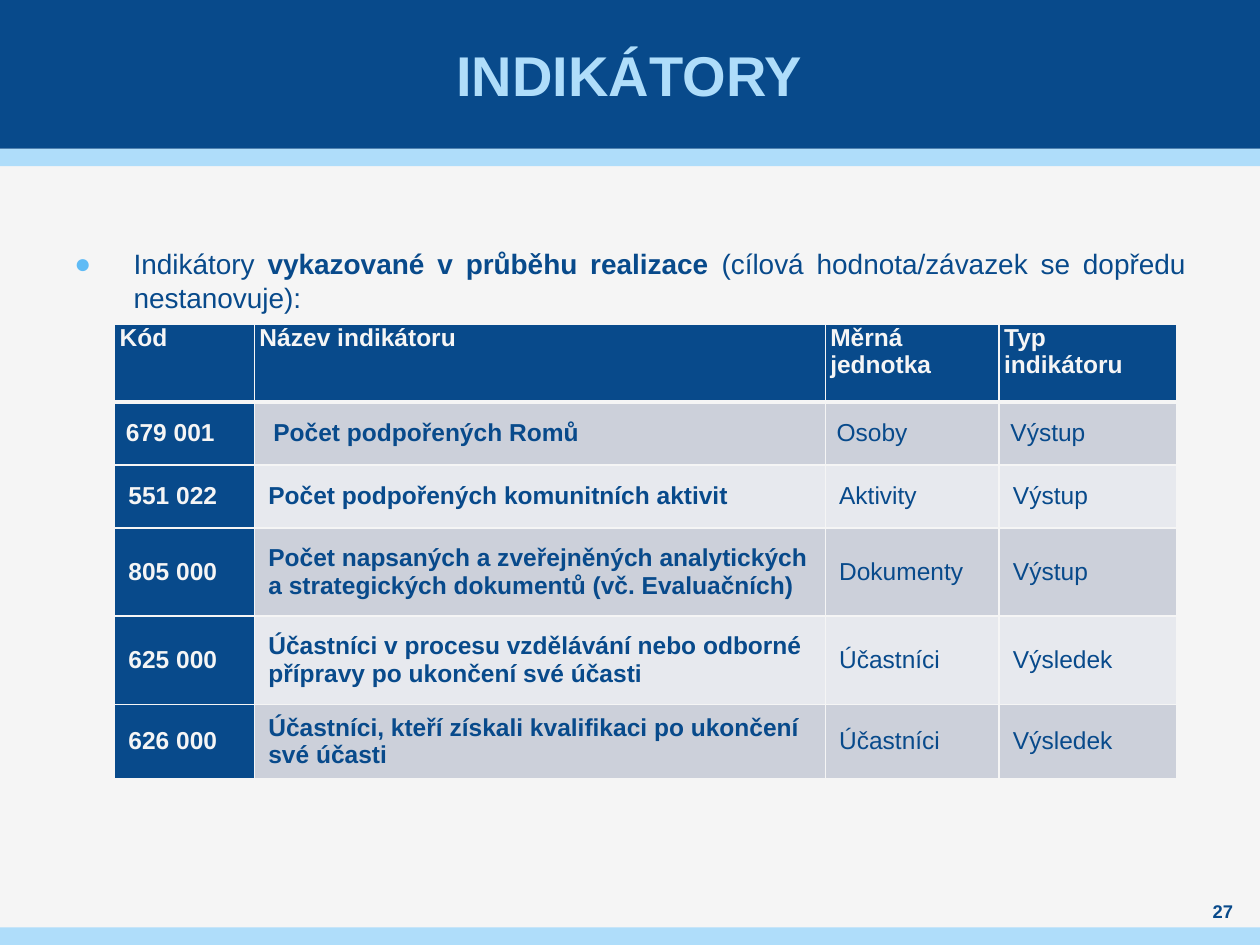
from lxml import etree
from pptx import Presentation
from pptx.dml.color import RGBColor
from pptx.enum.shapes import MSO_SHAPE
from pptx.enum.text import MSO_ANCHOR, PP_ALIGN
from pptx.oxml.ns import qn
from pptx.util import Inches, Pt

CENTER, JUSTIFY, LEFT = PP_ALIGN.CENTER, PP_ALIGN.JUSTIFY, PP_ALIGN.LEFT
TOP, MIDDLE = MSO_ANCHOR.TOP, MSO_ANCHOR.MIDDLE
RECTANGLE = MSO_SHAPE.RECTANGLE

NAVY = RGBColor(0x08, 0x4A, 0x8B)
SKY = RGBColor(0xAF, 0xDD, 0xFA)
BULLET_BLUE = RGBColor(0x5F, 0xBB, 0xF5)
PAPER = RGBColor(0xF5, 0xF5, 0xF5)
ROW_FILLS = [RGBColor(0xCC, 0xD0, 0xDA), RGBColor(0xE7, 0xE9, 0xEE)]

TITLE = "INDIKÁTORY"
PAGE_NUMBER = "27"
INTRO = [
    ("Indikátory ", False),
    ("vykazované v průběhu realizace ", True),
    ("(cílová hodnota/závazek se dopředu nestanovuje):", False),
]
INDICATORS = [
    ("Kód", "Název indikátoru", "Měrná jednotka", "Typ indikátoru"),
    ("679 001", "Počet podpořených Romů", "Osoby", "Výstup"),
    ("551 022", "Počet podpořených komunitních aktivit", "Aktivity", "Výstup"),
    ("805 000", "Počet napsaných a zveřejněných analytických a strategických "
     "dokumentů (vč. Evaluačních)", "Dokumenty", "Výstup"),
    ("625 000", "Účastníci v procesu vzdělávání nebo odborné přípravy po "
     "ukončení své účasti", "Účastníci", "Výsledek"),
    ("626 000", "Účastníci, kteří získali kvalifikaci po ukončení své účasti",
     "Účastníci", "Výsledek"),
]
COLUMN_WIDTHS = [1.11, 4.53, 1.38, 1.41]
ROW_HEIGHTS = [0.62, 0.5, 0.5, 0.7, 0.7, 0.59]
HEADER_INSETS = [0.04] * 4
FIRST_ROW_INSETS = [0.09, 0.15, 0.09, 0.09]
ROW_INSETS = [0.11] * 4
BANDS = [(1.18, 0.14, SKY), (0, 1.18, NAVY), (7.36, 0.14, SKY)]  # top, height


def add_run(paragraph, text, size, color, bold):
    run = paragraph.add_run()
    run.text = text
    run.font.color.rgb = color
    for name, value in {"name": "Arial", "size": Pt(size), "bold": bold}.items():
        setattr(run.font, name, value)


def format_frame(frame, anchor, left=0, top=0, right=0):
    values = {
        "word_wrap": True, "vertical_anchor": anchor,
        "margin_left": Inches(left), "margin_top": Inches(top),
        "margin_right": Inches(right), "margin_bottom": 0,
    }
    for name, value in values.items():
        setattr(frame, name, value)


def add_bullet(paragraph, indent):
    properties = paragraph._p.get_or_add_pPr()
    properties.set("marL", str(Inches(indent)))
    properties.set("indent", str(-Inches(indent)))
    color = etree.SubElement(properties, qn("a:buClr"))
    etree.SubElement(color, qn("a:srgbClr"), val=str(BULLET_BLUE))
    etree.SubElement(properties, qn("a:buFont"), typeface="Arial")
    etree.SubElement(properties, qn("a:buChar"), char="●")


def set_borders(cell, widths):
    """Draw the left, right, top and bottom borders, with widths in points."""
    properties = cell._tc.get_or_add_tcPr()
    for position, (side, width) in enumerate(zip("LRTB", widths)):
        line = etree.Element(qn(f"a:ln{side}"), w=str(Pt(width)))
        fill = etree.SubElement(line, qn("a:solidFill"))
        etree.SubElement(fill, qn("a:srgbClr"), val=str(PAPER))
        properties.insert(position, line)


def add_bands(slide):
    for top, height, color in BANDS:
        band = slide.shapes.add_shape(
            RECTANGLE, 0, Inches(top), Inches(10), Inches(height))
        band.shadow.inherit = False
        band.fill.solid()
        band.fill.fore_color.rgb = color
        band.line.fill.background()


def add_title(slide):
    title = slide.shapes.title
    slide.shapes.element.append(title.element)  # in front of the bands
    title.left, title.top = Inches(0.39), Inches(0)
    title.width, title.height = Inches(9.21), Inches(1.18)
    format_frame(title.text_frame, MIDDLE, left=0.04, right=0.04)
    paragraph = title.text_frame.paragraphs[0]
    paragraph.alignment = CENTER
    add_run(paragraph, TITLE, 32, SKY, True)


def add_text_box(slide, box, alignment, anchor, top_inset=0):
    frame = slide.shapes.add_textbox(*map(Inches, box)).text_frame
    format_frame(frame, anchor, top=top_inset)
    frame.paragraphs[0].alignment = alignment
    return frame.paragraphs[0]


def add_indicator_table(slide):
    table = slide.shapes.add_table(
        len(ROW_HEIGHTS), len(COLUMN_WIDTHS), Inches(0.91), Inches(2.57),
        Inches(sum(COLUMN_WIDTHS)), Inches(sum(ROW_HEIGHTS))).table
    for column, width in zip(table.columns, COLUMN_WIDTHS):
        column.width = Inches(width)
    insets = [HEADER_INSETS, FIRST_ROW_INSETS] + [ROW_INSETS] * 4
    for r, texts in enumerate(INDICATORS):
        table.rows[r].height = Inches(ROW_HEIGHTS[r])
        header = r == 0
        for c, text in enumerate(texts):
            cell = table.cell(r, c)
            dark = header or c == 0
            cell.fill.solid()
            cell.fill.fore_color.rgb = NAVY if dark else ROW_FILLS[(r - 1) % 2]
            set_borders(cell, (1, 1, 3 if r == 1 else 1, 3 if header else 1))
            cell.vertical_anchor = TOP if header else MIDDLE
            cell.margin_left = Inches(insets[r][c])
            cell.margin_right = Inches(0.1 if header else 0.07)
            cell.margin_top = cell.margin_bottom = 0
            paragraph = cell.text_frame.paragraphs[0]
            paragraph.alignment = LEFT
            add_run(paragraph, text, 14, PAPER if dark else NAVY,
                    header or c < 2)


def main():
    presentation = Presentation()
    presentation.slide_width, presentation.slide_height = Inches(10), Inches(7.5)
    slide = presentation.slides.add_slide(presentation.slide_layouts[5])
    slide.background.fill.solid()
    slide.background.fill.fore_color.rgb = PAPER

    add_bands(slide)
    add_title(slide)
    intro = add_text_box(slide, (0.59, 1.55, 8.82, 5.15), JUSTIFY, TOP, 0.41)
    add_bullet(intro, 0.47)
    for text, bold in INTRO:
        add_run(intro, text, 16, NAVY, bold)
    number = add_text_box(slide, (9.45, 7.13, 0.51, 0.2), CENTER, MIDDLE)
    add_run(number, PAGE_NUMBER, 10.5, NAVY, True)
    add_indicator_table(slide)
    presentation.save("out.pptx")


if __name__ == "__main__":
    main()
